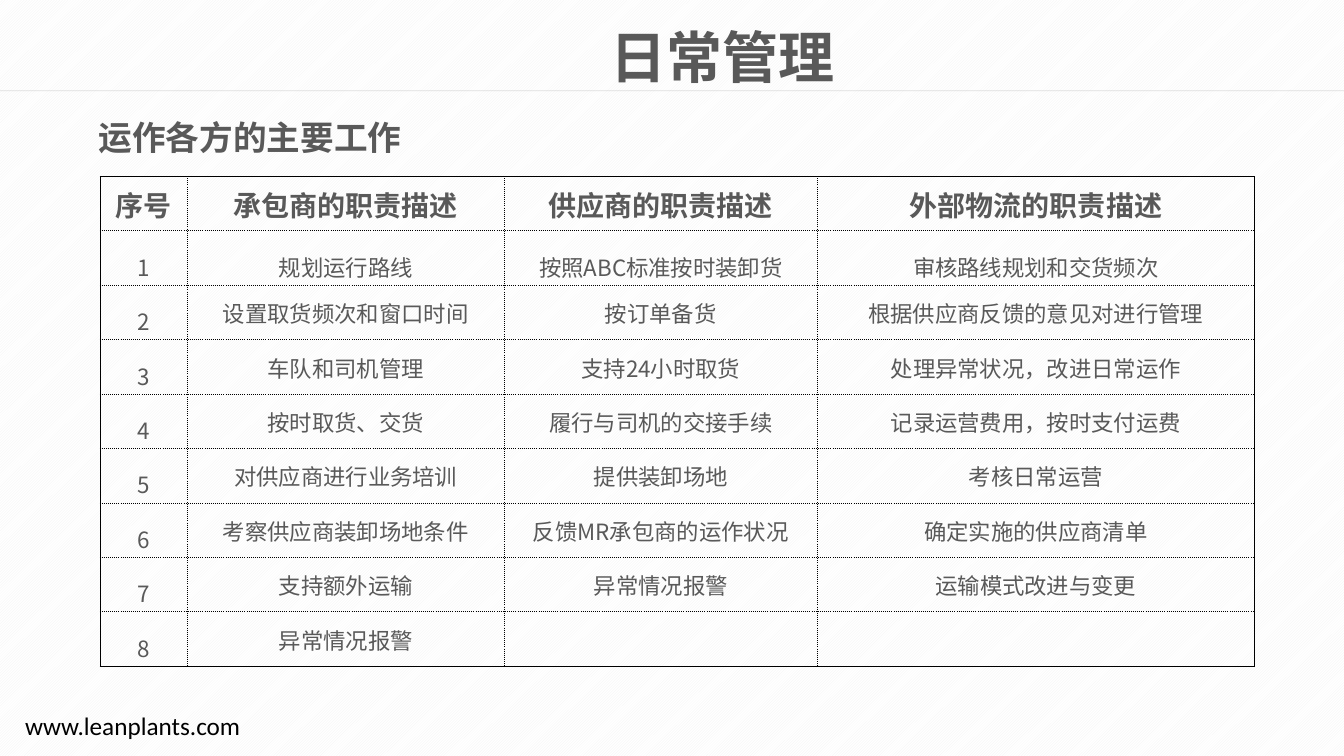
from dataclasses import dataclass

from lxml.etree import SubElement
from pptx import Presentation
from pptx.dml.color import RGBColor
from pptx.enum.dml import MSO_PATTERN
from pptx.enum.shapes import MSO_CONNECTOR
from pptx.enum.text import MSO_ANCHOR, PP_ALIGN
from pptx.oxml.ns import qn
from pptx.util import Inches, Pt


@dataclass(frozen=True)
class Theme:
    text: str = "595959"
    dark: str = "000000"
    rule: str = "BFBFBF"
    paper: str = "FFFFFF"
    stripe: str = "F2F2F2"
    font: str = "Noto Sans CJK SC"
    footer_font: str = "Calibri"
    title: int = 40
    subtitle: int = 24
    header: int = 20
    body: int = 16
    footer: int = 18
    line: float = 0.5


THEME = Theme()

HEADERS = ["序号", "承包商的职责描述", "供应商的职责描述", "外部物流的职责描述"]
DUTIES = [
    ["规划运行路线", "按照ABC标准按时装卸货", "审核路线规划和交货频次"],
    ["设置取货频次和窗口时间", "按订单备货", "根据供应商反馈的意见对进行管理"],
    ["车队和司机管理", "支持24小时取货", "处理异常状况，改进日常运作"],
    ["按时取货、交货", "履行与司机的交接手续", "记录运营费用，按时支付运费"],
    ["对供应商进行业务培训", "提供装卸场地", "考核日常运营"],
    ["考察供应商装卸场地条件", "反馈MR承包商的运作状况", "确定实施的供应商清单"],
    ["支持额外运输", "异常情况报警", "运输模式改进与变更"],
    ["异常情况报警", "", ""],
]
COLUMN_WIDTHS = [0.87, 3.14, 3.11, 4.33]
ROW_HEIGHT = 0.54


def rgb(value):
    return RGBColor.from_string(value)


def write(tf, text, size, color=THEME.text, font=THEME.font, bold=False, align=PP_ALIGN.LEFT):
    tf.text = text
    p = tf.paragraphs[0]
    p.alignment = align
    for r in p.runs:
        r.font.size = Pt(size)
        r.font.bold = bold
        r.font.name = font
        r.font.color.rgb = rgb(color)
        SubElement(r.font._element, qn("a:ea"), typeface=font)
    return p


def place(sp, left, top, width, height):
    sp.left, sp.top = Inches(left), Inches(top)
    sp.width, sp.height = Inches(width), Inches(height)


def set_background(s):
    fill = s.background.fill
    fill.patterned()
    fill.pattern = MSO_PATTERN.DARK_UPWARD_DIAGONAL
    fill.fore_color.rgb = rgb(THEME.stripe)
    fill.back_color.rgb = rgb(THEME.paper)


def add_title(s, text):
    sp = s.shapes.title
    place(sp, 4.17, 0.17, 5.99, 0.77)
    sp.text_frame.vertical_anchor = MSO_ANCHOR.MIDDLE
    write(sp.text_frame, text, THEME.title, bold=True, align=PP_ALIGN.CENTER)


def add_text(s, box, text, size, inset=0.1, **style):
    sp = s.shapes.add_textbox(*map(Inches, box))
    tf = sp.text_frame
    tf.word_wrap = True
    tf.margin_left = Inches(inset)
    tf.vertical_anchor = MSO_ANCHOR.MIDDLE
    write(tf, text, size, **style)


def add_rule(s, y, width):
    line = s.shapes.add_connector(MSO_CONNECTOR.STRAIGHT, 0, Inches(y), width, Inches(y))
    line.line.width = Pt(THEME.line)
    line.line.color.rgb = rgb(THEME.rule)
    color = line.line._ln.find(".//" + qn("a:srgbClr"))
    SubElement(color, qn("a:alpha"), val="50000")
    SubElement(line._element.spPr, qn("a:effectLst"))


def set_borders(cell, solid_sides):
    tc_pr = cell._tc.get_or_add_tcPr()
    for side in "LRTB":
        ln = SubElement(tc_pr, qn(f"a:ln{side}"), w=str(Pt(THEME.line)))
        fill = SubElement(ln, qn("a:solidFill"))
        SubElement(fill, qn("a:srgbClr"), val=THEME.dark)
        dash = "solid" if side in solid_sides else "sysDot"
        SubElement(ln, qn("a:prstDash"), val=dash)
    cell.fill.background()


def format_cell(cell, text, row, col):
    cell.vertical_anchor = MSO_ANCHOR.MIDDLE
    cell.margin_left = cell.margin_right = cell.margin_top = Inches(0.01)
    cell.margin_bottom = 0
    size = THEME.body if row else THEME.header
    p = write(cell.text_frame, text, size, bold=row == 0, align=PP_ALIGN.CENTER)
    if row == 1 or (row and col == 0):
        p.line_spacing = 1.5


def add_duty_table(s, left, top):
    rows = [HEADERS] + [[str(n), *duties] for n, duties in enumerate(DUTIES, 1)]
    last_row, last_col = len(rows) - 1, len(HEADERS) - 1
    frame = s.shapes.add_table(
        len(rows), len(HEADERS), Inches(left), Inches(top),
        Inches(sum(COLUMN_WIDTHS)), Inches(ROW_HEIGHT * len(rows)),
    )
    table = frame.table
    table.first_row = table.horz_banding = False
    for column, width in zip(table.columns, COLUMN_WIDTHS):
        column.width = Inches(width)
    for i, texts in enumerate(rows):
        table.rows[i].height = Inches(ROW_HEIGHT)
        for j, text in enumerate(texts):
            cell = table.cell(i, j)
            format_cell(cell, text, i, j)
            edges = {"L": j == 0, "R": j == last_col, "T": i == 0, "B": i == last_row}
            set_borders(cell, [side for side, outer in edges.items() if outer])


def main():
    prs = Presentation()
    prs.slide_width, prs.slide_height = Inches(13.33), Inches(7.5)
    s = prs.slides.add_slide(prs.slide_layouts[5])
    set_background(s)
    add_rule(s, 0.9, prs.slide_width)
    add_title(s, "日常管理")
    add_text(s, (0.73, 0.86, 11.2, 1), "运作各方的主要工作", THEME.subtitle, inset=0.25, bold=True)
    add_duty_table(s, 0.99, 1.75)
    add_text(s, (0.15, 7, 2.67, 0.4), "www.leanplants.com", THEME.footer,
             color=THEME.dark, font=THEME.footer_font)
    prs.save("out.pptx")


if __name__ == "__main__":
    main()
